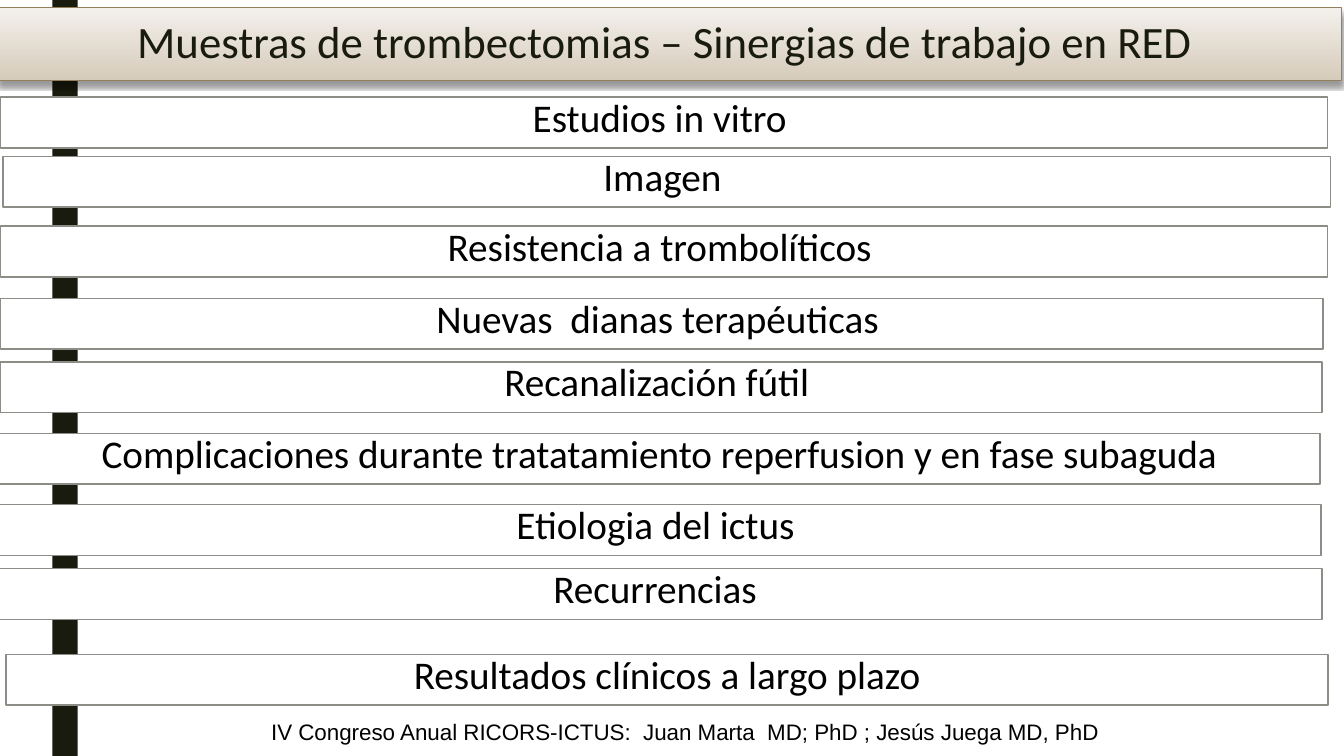
from lxml.etree import SubElement
from pptx import Presentation
from pptx.dml.color import RGBColor
from pptx.enum.shapes import MSO_SHAPE
from pptx.enum.text import MSO_ANCHOR, PP_ALIGN
from pptx.oxml.ns import qn
from pptx.util import Cm, Pt

DARK = RGBColor(0x19, 0x1B, 0x0E)
BLACK = RGBColor(0x00, 0x00, 0x00)
WHITE = RGBColor(0xFF, 0xFF, 0xFF)
GREY = RGBColor(0x8C, 0x8D, 0x86)
SAND_LIGHT = RGBColor(0xF3, 0xF0, 0xEC)
SAND_DARK = RGBColor(0xD6, 0xCB, 0xBA)
SAND_LINE = RGBColor(0x94, 0x80, 0x58)


def write_centred(frame, text, font, size, color, spacing=1.0):
    frame.word_wrap = True
    paragraph = frame.paragraphs[0]
    paragraph.alignment = PP_ALIGN.CENTER
    paragraph.line_spacing = spacing
    run = paragraph.add_run()
    run.text = text
    run.font.name = font
    run.font.size = Pt(size)
    run.font.color.rgb = color


presentation = Presentation()
presentation.slide_width = Cm(33.87)
presentation.slide_height = Cm(19.05)
slide = presentation.slides.add_slide(presentation.slide_layouts[5])
shapes = slide.shapes

# Vertical band, behind everything else
band = shapes.add_shape(MSO_SHAPE.RECTANGLE, Cm(1.32), 0, Cm(0.64), Cm(19.05))
band.shadow.inherit = False
band.fill.solid()
band.fill.fore_color.rgb = DARK
band.line.fill.background()
title = shapes.title
title.element.addprevious(band.element)

# Title with a sand gradient and a soft shadow below
title.left, title.top, title.width, title.height = Cm(-0.05), Cm(0.2), Cm(33.87), Cm(1.83)
title.fill.gradient()
title.fill.gradient_angle = 270
for stop, color in zip(title.fill.gradient_stops, (SAND_LIGHT, SAND_DARK)):
    stop.color.rgb = color
title.fill.gradient_stops[0].position = 0
title.fill.gradient_stops[1].position = 1
title.line.color.rgb = SAND_LINE
title.line.width = Pt(0.75)
title.shadow.inherit = False
effects = title.element.spPr.find(qn("a:effectLst"))
shadow = SubElement(effects, qn("a:outerShdw"), blurRad="40000", dist="50000",
                    dir="5400000", rotWithShape="0")
shade = SubElement(shadow, qn("a:srgbClr"), val="000000")
SubElement(shade, qn("a:alpha"), val="40000")
title.text_frame.vertical_anchor = MSO_ANCHOR.MIDDLE
write_centred(title.text_frame, "Muestras de trombectomias – Sinergias de trabajo en RED ",
              "Calibri", 32, DARK, 0.9)

# Research lines: left, top and width in cm
research_lines = [
    ("Estudios in vitro ", 0.02, 2.45, 33.43),
    ("Imagen ", 0.08, 3.94, 33.45),
    ("Resistencia a trombolíticos ", 0.02, 5.7, 33.43),
    ("Nuevas  dianas terapéuticas ", 0.02, 7.52, 33.32),
    ("Recanalización fútil ", 0, 9.12, 33.32),
    ("Complicaciones durante tratatamiento reperfusion y en fase subaguda",
     -0.05, 10.92, 33.32),
    ("Etiologia del ictus ", -0.03, 12.72, 33.32),
    ("Recurrencias ", -0.08, 14.33, 33.4),
    ("Resultados clínicos a largo plazo", 0.15, 16.49, 33.32),
]
for topic, left, top, width in research_lines:
    box = shapes.add_shape(MSO_SHAPE.RECTANGLE, Cm(left), Cm(top), Cm(width), Cm(1.28))
    box.shadow.inherit = False
    box.fill.solid()
    box.fill.fore_color.rgb = WHITE
    box.line.color.rgb = GREY
    box.line.width = Pt(1)
    box.text_frame.vertical_anchor = MSO_ANCHOR.TOP
    write_centred(box.text_frame, topic, "Calibri", 28, BLACK, 0.8)

# Congress and authors
credits = shapes.add_textbox(Cm(6.12), Cm(17.98), Cm(22.61), Cm(0.94))
write_centred(credits.text_frame,
              "IV Congreso Anual RICORS-ICTUS:  Juan Marta  MD; PhD ; Jesús Juega MD, PhD  ",
              "Arial", 16, BLACK)

presentation.save("out.pptx")
